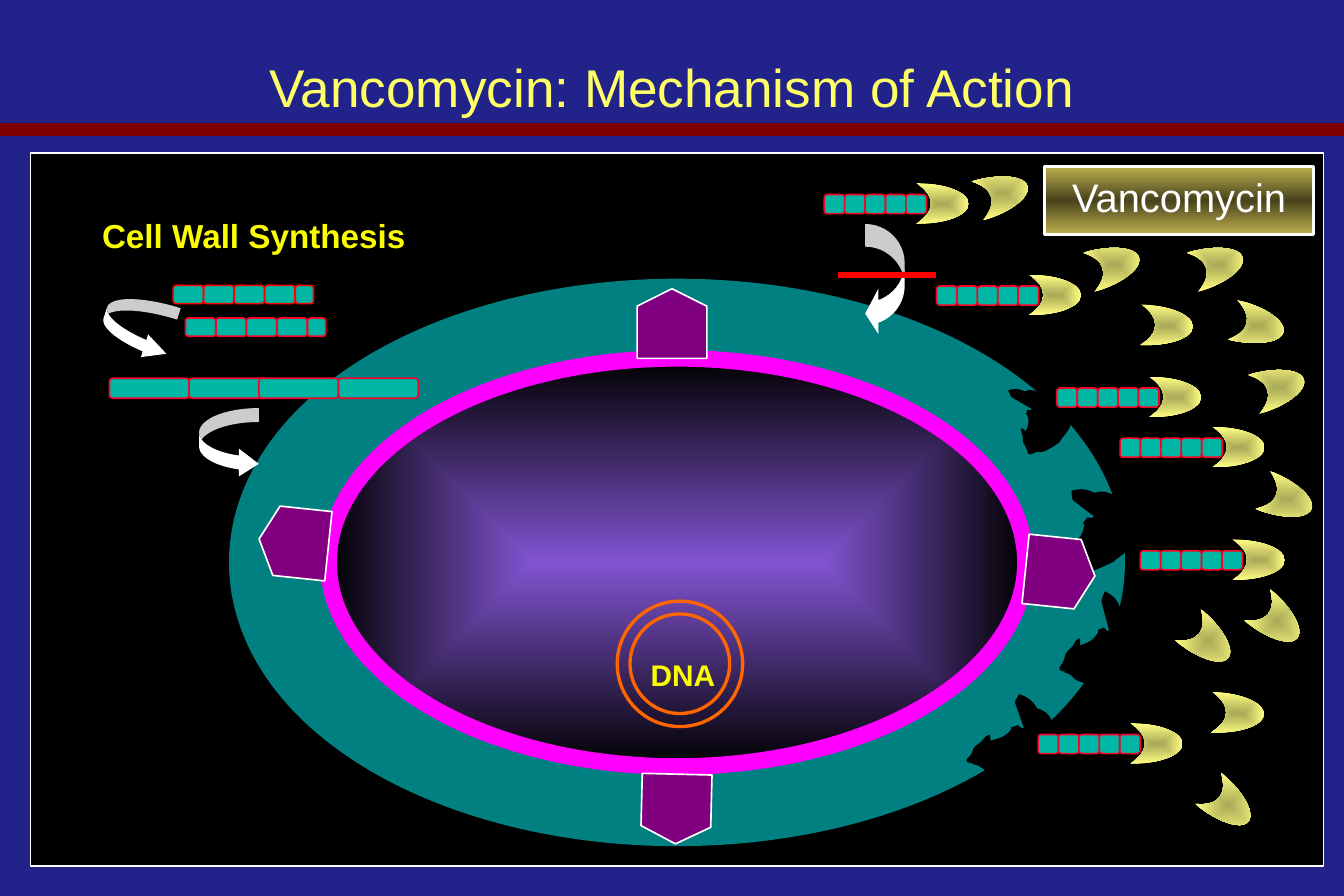
from dataclasses import dataclass

from pptx import Presentation
from pptx.dml.color import RGBColor
from pptx.enum.shapes import MSO_CONNECTOR, MSO_SHAPE
from pptx.enum.text import MSO_ANCHOR, MSO_AUTO_SIZE, PP_ALIGN
from pptx.oxml import parse_xml
from pptx.oxml.ns import nsdecls, qn
from pptx.util import Pt

RECT, OVAL = MSO_SHAPE.RECTANGLE, MSO_SHAPE.OVAL
ROUND, MOON = MSO_SHAPE.ROUNDED_RECTANGLE, MSO_SHAPE.MOON
PLATE, ARROW = MSO_SHAPE.PENTAGON, MSO_SHAPE.CURVED_RIGHT_ARROW
STRAIGHT = MSO_CONNECTOR.STRAIGHT
CENTER, MIDDLE, TOP = PP_ALIGN.CENTER, MSO_ANCHOR.MIDDLE, MSO_ANCHOR.TOP
FIXED = MSO_AUTO_SIZE.NONE

FONT = "Arial"
WHITE, BLACK, YELLOW = "FFFFFF", "000000", "FAFD00"
TEAL, RED, ORANGE = "00B7A5", "FC0128", "FF6600"


@dataclass
class Box:
    x: float
    y: float
    w: float
    h: float
    turn: float = 0


@dataclass
class Chain:
    x: float
    y: float
    pitch: float
    height: float
    widths: list[float]
    line: str = RED


@dataclass
class Arrow:
    box: Box
    adj: tuple[float, ...]
    flip: bool = False


# Bite outline on an 88 x 69 grid: start, then cubic curves (two handles, end)
START = (3, 58)
CURVES = [
    (7, 59, 11, 59, 14, 62), (16, 63, 17, 65, 20, 65), (27, 67, 34, 68, 42, 69),
    (49, 68, 57, 68, 64, 67), (68, 67, 75, 63, 75, 63), (79, 64, 83, 67, 86, 65),
    (88, 64, 85, 62, 84, 60), (83, 57, 83, 55, 82, 52), (84, 49, 87, 45, 86, 41),
    (82, 30, 83, 29, 73, 23), (69, 16, 67, 14, 60, 12), (56, 5, 53, 3, 45, 0),
    (40, 9, 41, 4, 45, 17), (45, 17, 49, 28, 49, 28), (48, 30, 45, 27, 44, 26),
    (30, 31, 46, 24, 34, 34), (32, 36, 25, 38, 21, 39), (21, 38, 21, 33, 20, 34),
    (16, 35, 15, 39, 12, 41), (10, 42, 8, 44, 7, 45), (6, 47, 6, 49, 5, 50),
    (4, 53, 0, 54, 1, 56), (1, 58, 5, 57, 7, 58), (7, 59, 4, 58, 3, 58),
]

BITES = [Box(638, 356.4, 54.7, 57.6), Box(627.1, 292.3, 63.4, 49.7, 327),
         Box(581.8, 418.3, 63.4, 49.7), Box(604.1, 229, 38.2, 43.9, 314)]
ARROWS = [Arrow(Box(120, 246, 36, 42), (0.233, 0.466, 0.333)),
          Arrow(Box(62, 178.6, 42.5, 36, 17.4), (0.2, 0.4, 0.389)),
          Arrow(Box(521.5, 135, 23.8, 67.7), (0.574, 1.148, 0.333), True)]
PLATES = [Box(384, 174, 42, 42, 270), Box(386.6, 466.6, 42, 42, 91.4),
          Box(618, 324, 42, 42, 5.9), Box(156, 306, 42, 42, 186)]
SHORT = [18.2] * 4 + [11]
WALLS = [Chain(66, 228, 48, 12, [48] * 2), Chain(156, 228, 48, 12, [48] * 2),
         Chain(104.4, 172, 18.4, 11, SHORT, "FF0000"),
         Chain(111.8, 191.7, 18.4, 11, SHORT)]
BOUND = [(496.8, 117.3), (564.5, 172.4), (687.3, 332),
         (675.1, 264.1), (625.7, 442.7), (637, 233.9)]
LOOSE = [(712.1, 374.2, 219.7), (742.3, 184.1, 193.5), (759.8, 288.7, 201.3),
         (687.4, 184.1, 182.2), (588.2, 104.4, 163.6), (655.4, 147.4, 163.6),
         (717.9, 147.4, 163.6), (753.8, 362.2, 219.7), (730.1, 417.6, 182.2),
         (724.3, 472.8, 219.7), (754.8, 221, 163.6)]


def tint(code: str) -> RGBColor:
    return RGBColor.from_string(code)


def paint(shape, fill: str | None, line: str | None = None, width: float = 1) -> None:
    shape.shadow.inherit = False
    if fill:
        shape.fill.solid()
        shape.fill.fore_color.rgb = tint(fill)
    else:
        shape.fill.background()
    if line:
        shape.line.color.rgb = tint(line)
        shape.line.width = Pt(width)
    else:
        shape.line.fill.background()


def draw(kind, box: Box, fill: str | None, line: str | None = None,
         width: float = 1, adj: tuple[float, ...] = ()):
    shape = shapes.add_shape(kind, Pt(box.x), Pt(box.y), Pt(box.w), Pt(box.h))
    shape.rotation = box.turn
    for i, value in enumerate(adj):
        shape.adjustments[i] = value
    paint(shape, fill, line, width)
    return shape


def blend(shape, stops: list[tuple[int, str]], path: str | None = None) -> None:
    marks = "".join(f'<a:gs pos="{pos * 1000}"><a:srgbClr val="{code}"/></a:gs>'
                    for pos, code in stops)
    way = '<a:lin ang="5400000" scaled="0"/>'
    if path:
        way = (f'<a:path path="{path}"><a:fillToRect l="50000" t="50000" '
               'r="50000" b="50000"/></a:path>')
    props = shape._element.spPr
    props.replace(props.find(qn("a:solidFill")), parse_xml(
        f'<a:gradFill {nsdecls("a")} rotWithShape="1"><a:gsLst>{marks}</a:gsLst>'
        f'{way}</a:gradFill>'))


def write(shape, text: str, size: float, color: str, bold: bool = False,
          anchor=TOP) -> None:
    frame = shape.text_frame
    frame.word_wrap, frame.auto_size = True, FIXED
    frame.vertical_anchor = anchor
    para = frame.paragraphs[0]
    para.alignment = CENTER
    run = para.add_run()
    run.text = text
    run.font.name, run.font.size, run.font.bold = FONT, Pt(size), bold
    run.font.color.rgb = tint(color)


def label(box: Box, text: str, size: float) -> None:
    area = shapes.add_textbox(Pt(box.x), Pt(box.y), Pt(box.w), Pt(box.h))
    write(area, text, size, YELLOW, True)


def rule(x1: float, x2: float, y: float, color: str, width: float) -> None:
    line = shapes.add_connector(STRAIGHT, Pt(x1), Pt(y), Pt(x2), Pt(y))
    line.line.color.rgb = tint(color)
    line.line.width = Pt(width)
    line._element.spPr.append(parse_xml(f'<a:effectLst {nsdecls("a")}/>'))


def bite(box: Box) -> None:
    def spot(x: float, y: float) -> tuple[int, int]:
        return Pt(box.x + x * box.w / 88), Pt(box.y + y * box.h / 69)

    pen = shapes.build_freeform(*spot(*START))
    pen.add_line_segments([spot(*curve[4:]) for curve in CURVES], close=True)
    shape = pen.convert_to_shape()
    # Bend each straight segment into its curve
    sides = list(shape._element.spPr.iter(qn("a:lnTo")))
    for side, curve in zip(sides, CURVES):
        dots = [spot(*curve[i:i + 2]) for i in (0, 2, 4)]
        marks = "".join(f'<a:pt x="{x - shape.left}" y="{y - shape.top}"/>'
                        for x, y in dots)
        side.getparent().replace(side, parse_xml(
            f'<a:cubicBezTo {nsdecls("a")}>{marks}</a:cubicBezTo>'))
    shape.rotation = box.turn
    paint(shape, BLACK)


def link(chain: Chain) -> None:
    for i, wide in enumerate(chain.widths):
        draw(ROUND, Box(chain.x + i * chain.pitch, chain.y, wide, chain.height),
             TEAL, chain.line, adj=(0.167,))


def moon(x: float, y: float, turn: float) -> None:
    shape = draw(MOON, Box(x, y, 31.7, 24.5, turn), WHITE, adj=(0.72,))
    blend(shape, [(0, "AAA957"), (100, "FFFE82")], "rect")


deck = Presentation()
deck.slide_width, deck.slide_height = Pt(810), Pt(540)
slide = deck.slides.add_slide(deck.slide_layouts[5])
shapes = slide.shapes
slide.background.fill.solid()
slide.background.fill.fore_color.rgb = tint("22228B")

# Title
title = shapes.title
title.left, title.top, title.width, title.height = Pt(60.8), Pt(24.5), Pt(688.5), Pt(55.4)
write(title, "Vancomycin: Mechanism of Action", 32, "FFFF66", anchor=MIDDLE)

# Panel and cell
draw(RECT, Box(18.5, 92.2, 779.2, 429.8), BLACK, WHITE)
draw(OVAL, Box(168, 198, 480, 282), None, "008080", 60)
cell = draw(OVAL, Box(198, 216, 420, 246), WHITE, "FF00FF", 10)
blend(cell, [(0, "8154D1"), (100, BLACK)], "shape")

# Drug name
drug = draw(RECT, Box(629.6, 100.3, 162, 41), WHITE, WHITE, 2)
blend(drug, [(0, "BFB04E"), (50, "48421D"), (100, "BFB04E")])
write(drug, "Vancomycin", 24, WHITE)

# Synthesis arrows and the blocked step
for arrow in ARROWS:
    shape = draw(ARROW, arrow.box, WHITE, adj=arrow.adj)
    if arrow.flip:
        shape._element.spPr.find(qn("a:xfrm")).set("flipH", "1")
label(Box(42, 126, 222, 30), "Cell Wall Synthesis", 20)
rule(505, 564.3, 165.6, "FF0000", 3.5)

# Damaged wall
for box in BITES:
    bite(box)

# DNA rings
for box in (Box(379.7, 370, 60, 60), Box(372, 362.3, 75.6, 75.6)):
    draw(OVAL, box, None, ORANGE, 2)
label(Box(381.6, 392.4, 60, 24), "DNA", 18)

# Membrane proteins
for box in PLATES:
    draw(PLATE, box, "800080", WHITE, adj=(0.25,))

# Wall chains, bound drug and loose drug
for chain in WALLS:
    link(chain)
for x, y in BOUND:
    moon(x + 55.4, y - 6.8, 180.4)
    link(Chain(x, y, 12.3, 11.5, [12.3] * 5))
for x, y, turn in LOOSE:
    moon(x, y, turn)

# Rule under the title
rule(0, 810, 78, "800000", 7.5)

deck.save("out.pptx")
